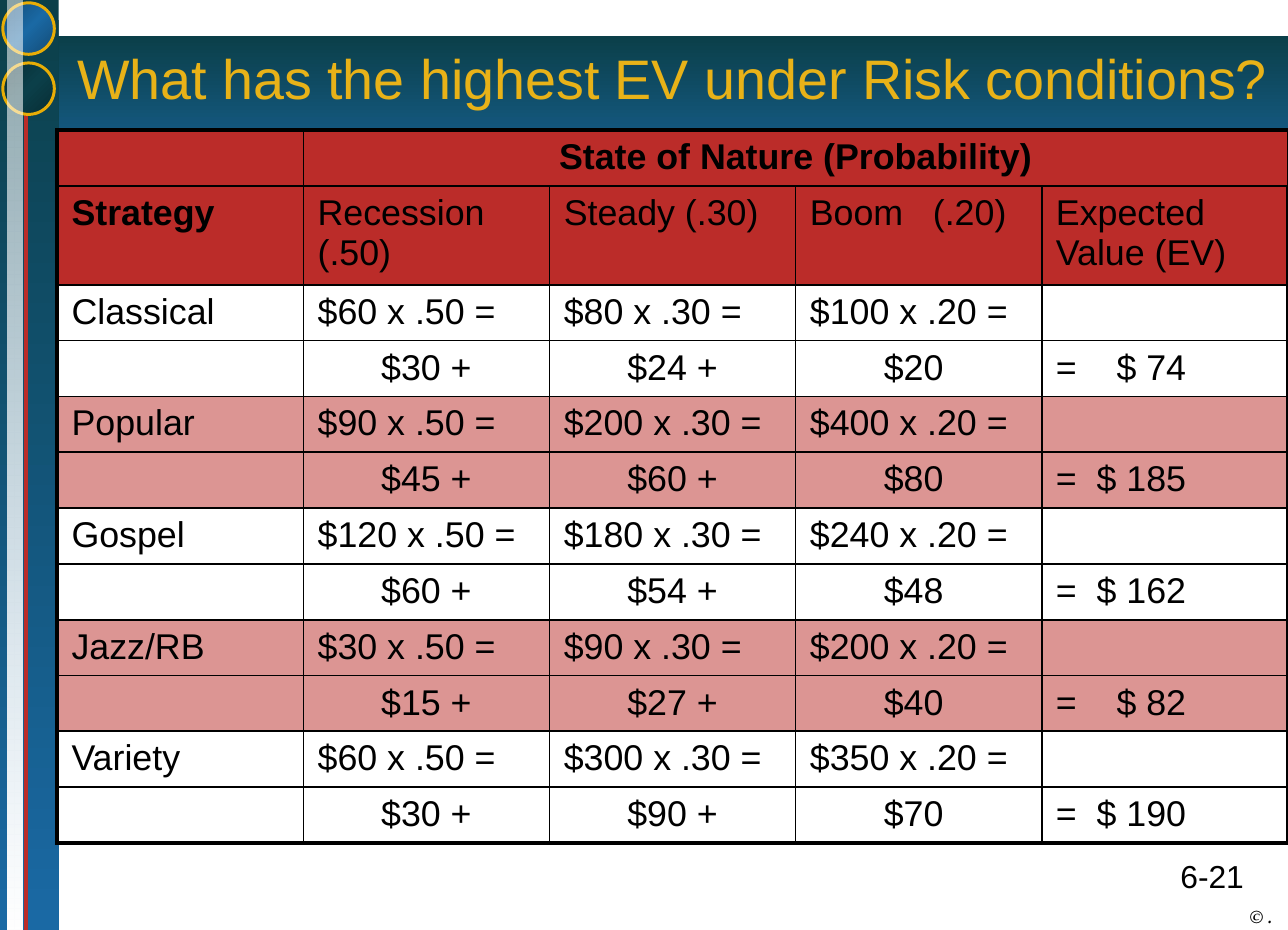
from dataclasses import dataclass
from typing import NamedTuple

from lxml import etree
from pptx import Presentation
from pptx import util as u
from pptx.dml.color import RGBColor
from pptx.enum import shapes, text
from pptx.oxml import parse_xml
from pptx.oxml.ns import nsdecls, qn

WIDE, HIGH = 9, 6.5
DARK = RGBColor(0x0B, 0x3F, 0x49)
BLUE = RGBColor(0x1A, 0x69, 0xA4)
DEEP = RGBColor(0x08, 0x2D, 0x34)
NAVY = RGBColor(0x13, 0x4B, 0x75)
GOLD = RGBColor(0xE8, 0xAD, 0x06)
AMBER = RGBColor(0xE8, 0xB2, 0x18)
RED = RGBColor(0xBB, 0x2C, 0x29)
WHITE = RGBColor(0xFF, 0xFF, 0xFF)
BLACK = RGBColor(0, 0, 0)
LEFT, MID, RIGHT = text.PP_ALIGN.LEFT, text.PP_ALIGN.CENTER, text.PP_ALIGN.RIGHT
ODDS = (0.5, 0.3, 0.2)
COL, ROW, TALL = 1.72, 0.38, 0.67


class Stop(NamedTuple):
    pos: int
    color: RGBColor
    alpha: int = 100


@dataclass
class Panel:
    kind: shapes.MSO_SHAPE
    box: tuple[float, float, float, float]
    stops: list[Stop]
    angle: int = 90
    edge: bool = False


@dataclass
class Label:
    words: str
    box: tuple[float, float, float, float]
    size: float
    color: RGBColor = BLACK
    face: str = "Arial"
    align: text.PP_ALIGN = RIGHT
    anchor: text.MSO_ANCHOR = text.MSO_ANCHOR.TOP
    inset: tuple[float, float] = (0.1, 0.05)
    strong: bool = False
    wrap: bool = True


class Entry(NamedTuple):
    words: str = ""
    align: text.PP_ALIGN = LEFT
    bold: bool = False
    tab: tuple[float, str] | None = None  # place in inches, alignment


class Genre(NamedTuple):
    name: str
    pays: tuple[int, int, int]


RECT, OVAL = shapes.MSO_SHAPE.RECTANGLE, shapes.MSO_SHAPE.OVAL
FADE = [Stop(0, DARK), Stop(100, BLUE)]
PANELS = [
    Panel(RECT, (0, 0.25, WIDE, 1.13), FADE),
    Panel(RECT, (0, 0, 0.41, HIGH), FADE),
]
TRIM = [
    Panel(OVAL, (0.02, 0.44, 0.36, 0.36),
          [Stop(0, DEEP), Stop(50, DARK), Stop(100, DEEP)], 45, True),
    Panel(OVAL, (0.02, 0.02, 0.36, 0.36),
          [Stop(0, NAVY), Stop(50, BLUE), Stop(100, NAVY)], 45, True),
    Panel(RECT, (0.05, 0, 0.11, HIGH), [Stop(0, WHITE, 52), Stop(100, WHITE)]),
]
TITLE = Label("What has the highest EV under Risk conditions?",
              (0.39, 0, 8.61, 1.08), 28, AMBER, align=MID,
              anchor=text.MSO_ANCHOR.MIDDLE, inset=(0.09, 0.04))
NOTES = [
    Label("6-21", (8, 5.94, 0.79, 0.37), 16),
    Label("© .", (8.73, 6.33, 0.16, 0.15), 9, face="TeX Gyre Pagella",
          anchor=text.MSO_ANCHOR.BOTTOM, inset=(0, 0), strong=True, wrap=False),
]
GENRES = [
    Genre("Classical", (60, 80, 100)),
    Genre("Popular", (90, 200, 400)),
    Genre("Gospel", (120, 180, 240)),
    Genre("Jazz/RB", (30, 90, 200)),
    Genre("Variety", (60, 300, 350)),
]


def inches(box) -> list[u.Length]:
    return [u.Inches(n) for n in box]


def panel(slide, item: Panel) -> None:
    shape = slide.shapes.add_shape(item.kind, *inches(item.box))
    shape.shadow.inherit = False
    if item.edge:
        shape.line.color.rgb, shape.line.width = GOLD, u.Pt(1.5)
    else:
        shape.line.fill.background()
    shape.fill.gradient()
    grad = shape.fill._xPr.find(qn("a:gradFill"))
    for old in list(grad):
        grad.remove(old)
    marks = "".join(
        f'<a:gs pos="{s.pos * 1000}"><a:srgbClr val="{s.color}">'
        f'<a:alpha val="{s.alpha * 1000}"/></a:srgbClr></a:gs>' for s in item.stops)
    grad.append(parse_xml(f'<a:gsLst {nsdecls("a")}>{marks}</a:gsLst>'))
    etree.SubElement(grad, qn("a:lin"), ang=str(item.angle * 60000), scaled="0")


def label(slide, item: Label):
    box = slide.shapes.add_textbox(*inches(item.box))
    frame = box.text_frame
    frame.word_wrap, frame.vertical_anchor = item.wrap, item.anchor
    frame.margin_left = frame.margin_right = u.Inches(item.inset[0])
    frame.margin_top = frame.margin_bottom = u.Inches(item.inset[1])
    para = frame.paragraphs[0]
    para.text, para.alignment = item.words, item.align
    font = para.font
    font.size, font.name, font.color.rgb = u.Pt(item.size), item.face, item.color
    font.bold = font.italic = item.strong
    return para


def shade(para) -> None:
    """Give the text a black drop shadow."""
    para.runs[0]._r.get_or_add_rPr().append(parse_xml(
        f'<a:effectLst {nsdecls("a")}><a:outerShdw dist="35921" dir="2700000">'
        f'<a:srgbClr val="{BLACK}"/></a:outerShdw></a:effectLst>'))


def border(cell, side: str, width: float) -> None:
    cell._tc.get_or_add_tcPr().append(parse_xml(
        f'<a:ln{side} {nsdecls("a")} w="{u.Pt(width)}"><a:solidFill>'
        f'<a:srgbClr val="{BLACK}"/></a:solidFill></a:ln{side}>'))


def paint(cell, alpha: int) -> None:
    if not alpha:
        cell.fill.background()
        return
    cell.fill.solid()
    cell.fill.fore_color.rgb = RED
    if alpha < 100:
        tone = cell._tc.tcPr.find(qn("a:solidFill"))[0]
        etree.SubElement(tone, qn("a:alpha"), val=str(alpha * 1000))


def write(cell, item: Entry) -> None:
    cell.margin_left = cell.margin_right = u.Inches(0.1)
    cell.margin_top, cell.margin_bottom = u.Inches(0.05), u.Inches(0.04)
    para = cell.text_frame.paragraphs[0]
    para.text, para.alignment = item.words, item.align
    if item.tab:
        stops = etree.SubElement(para._p.get_or_add_pPr(), qn("a:tabLst"))
        place, side = item.tab
        etree.SubElement(stops, qn("a:tab"), pos=str(u.Inches(place)), algn=side)
    font = para.font
    font.size, font.name, font.bold = u.Pt(18), "Arial", item.bold
    font.color.rgb = BLACK


def entries() -> list[list[Entry]]:
    rows = [
        [Entry(), Entry("State of Nature (Probability)", MID, True)] + [Entry()] * 3,
        [Entry("Strategy", bold=True), Entry("Recession (.50)"), Entry("Steady (.30)"),
         Entry("Boom\t(.20)", tab=(0.86, "l")), Entry("Expected Value (EV)")],
    ]
    for name, pays in GENRES:
        parts = [round(pay * odd) for pay, odd in zip(pays, ODDS)]
        sums = [Entry(f"${part}{end}", MID) for part, end in zip(parts, (" +", " +", " "))]
        rows.append([Entry(name)] + [Entry(f"${pay} x {f'{odd:.2f}'[1:]} =")
                                     for pay, odd in zip(pays, ODDS)] + [Entry()])
        rows.append([Entry()] + sums + [Entry(f"=\t$ {sum(parts)}", tab=(0.91, "r"))])
    return rows


def grid(slide) -> None:
    rows = entries()
    down, across = len(rows), len(rows[0])
    frame = slide.shapes.add_table(down, across, *inches(
        (0.4, 0.91, COL * across, ROW * (down - 1) + TALL)))
    table = frame.table
    table.first_row = table.horz_banding = False
    for col in table.columns:
        col.width = u.Inches(COL)
    for r, row in enumerate(rows):
        table.rows[r].height = u.Inches(TALL if r == 1 else ROW)
        alpha = 100 if r < 2 else 50 * (r // 2 % 2 == 0)
        for c, item in enumerate(row):
            cell = table.cell(r, c)
            outer = {"L": c == 0, "R": c == across - 1, "T": r == 0, "B": r == down - 1}
            for side, edge in outer.items():
                border(cell, side, 2.25 if edge else 1)
            paint(cell, alpha)
            write(cell, item)
    table.cell(0, 1).merge(table.cell(0, across - 1))


def main() -> None:
    deck = Presentation()
    deck.slide_width, deck.slide_height = inches((WIDE, HIGH))
    slide = deck.slides.add_slide(deck.slide_layouts[6])

    # Title band and side bar
    for item in PANELS:
        panel(slide, item)
    rule = slide.shapes.add_connector(
        shapes.MSO_CONNECTOR.STRAIGHT, *inches((0.18, 0.79, 0.18, HIGH)))
    rule.line.color.rgb, rule.line.width = RED, u.Pt(2.25)
    etree.SubElement(rule._element.spPr, qn("a:effectLst"))
    for item in TRIM:
        panel(slide, item)

    # Footer, title and table
    for item in NOTES:
        label(slide, item)
    shade(label(slide, TITLE))
    grid(slide)
    deck.save("out.pptx")


if __name__ == "__main__":
    main()
